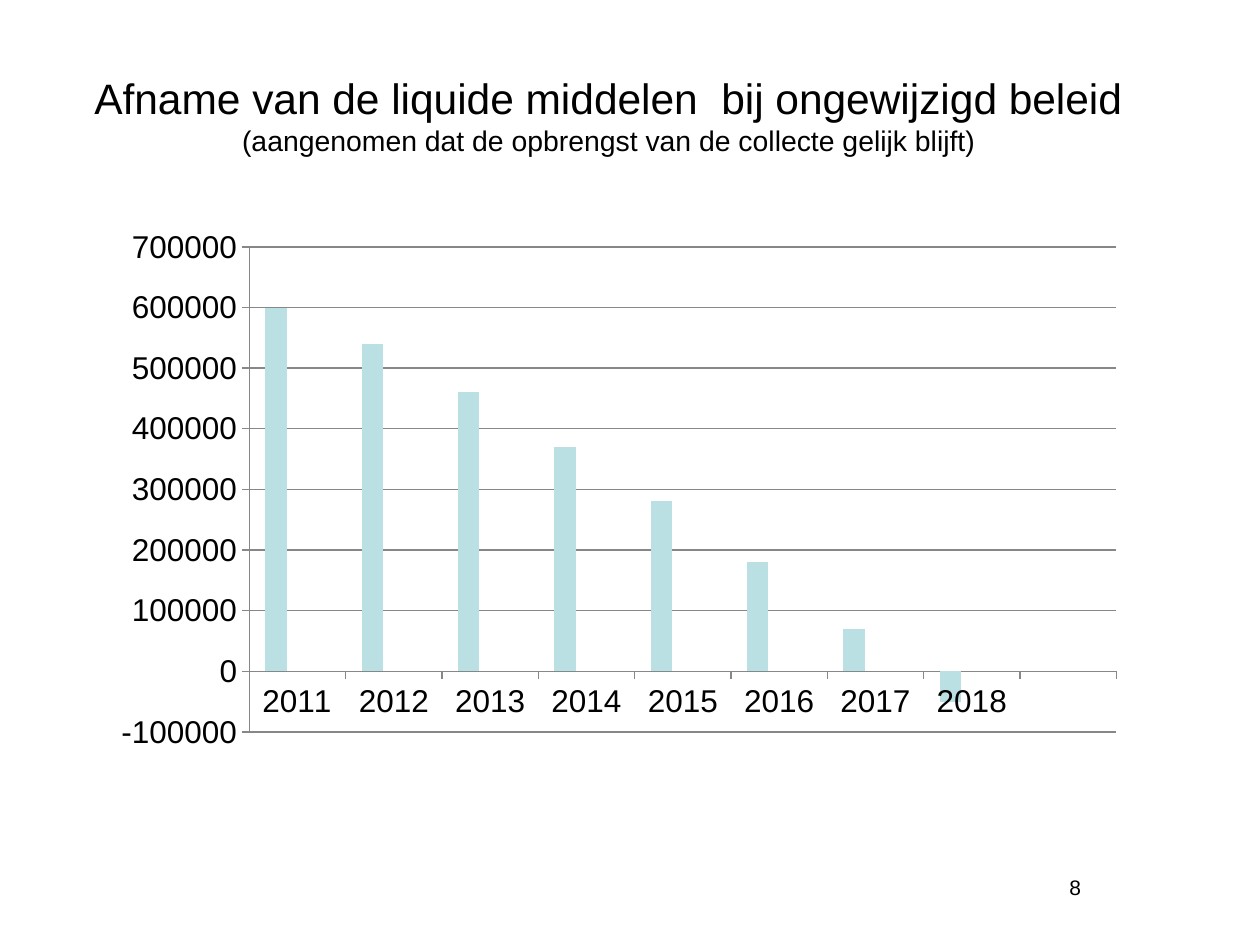
from dataclasses import dataclass

from lxml.etree import SubElement
from pptx import Presentation
from pptx.chart.data import CategoryChartData
from pptx.dml.color import RGBColor as RGB
from pptx.enum.chart import XL_CHART_TYPE as ChartType, XL_TICK_LABEL_POSITION as LabelPos, XL_TICK_MARK as Tick
from pptx.enum.text import MSO_ANCHOR as Anchor, PP_ALIGN as Align
from pptx.oxml.ns import qn
from pptx.util import Emu, Pt


@dataclass(frozen=True)
class Theme:
    """Colours, font and type sizes of the slide."""
    font: str = "Arial"
    text: RGB = RGB(0, 0, 0)
    line: RGB = RGB(0x87, 0x87, 0x87)
    series: tuple = (RGB(0xBB, 0xE0, 0xE3), RGB(0x33, 0x33, 0x99), RGB(0xFF, 0xFF, 0xFF))
    title: float = 24.3
    subtitle: float = 16.2
    axis: float = 18
    number: float = 12


THEME = Theme()
YEARS = [str(year) for year in range(2011, 2019)] + [""]
BALANCES = [600000, 540000, 460000, 370000, 280000, 180000, 70000, -50000, None]


def px(n):
    """Turn pixels into EMU."""
    return Emu(round(n * 914400 / 126))


def style_font(font, size):
    """Apply the theme's typeface and colour at a given size."""
    font.name, font.size = THEME.font, Pt(size)
    font.color.rgb = THEME.text


def add_text(s, lines, box, align=Align.LEFT, top=6):
    """Add one paragraph made of (text, size) lines."""
    tf = s.shapes.add_textbox(*map(px, box)).text_frame
    tf.word_wrap = True
    tf.vertical_anchor = Anchor.TOP
    tf.margin_top = px(top)
    p = tf.paragraphs[0]
    p.alignment = align
    for i, (text, size) in enumerate(lines):
        if i:
            p.add_line_break()
        r = p.add_run()
        r.text = text
        style_font(r.font, size)


def set_plot_area(chart, **fractions):
    """Fix the inner plot area as fractions of the chart."""
    area = chart.plots[0]._element.getparent()
    layout = area.find(qn("c:layout"))
    if layout is None:
        layout = SubElement(area, qn("c:layout"))
        area.insert(0, layout)
    manual = SubElement(layout, qn("c:manualLayout"))
    settings = {"layoutTarget": "inner", "xMode": "edge", "yMode": "edge", **fractions}
    for tag, value in settings.items():
        SubElement(manual, qn(f"c:{tag}")).set("val", str(value))


def style_axis(axis):
    """Give an axis its line and tick marks."""
    axis.format.line.color.rgb = THEME.line
    axis.format.line.width = Pt(0.75)
    axis.major_tick_mark = Tick.OUTSIDE
    axis.minor_tick_mark = Tick.NONE
    axis.tick_label_position = LabelPos.NEXT_TO_AXIS
    style_font(axis.tick_labels.font, THEME.axis)


def add_column_chart(s, box):
    """Add the column chart of the yearly balances."""
    data = CategoryChartData()
    data.categories = YEARS
    blank = [None] * len(YEARS)
    for i, values in enumerate((BALANCES, blank, blank), 1):
        data.add_series(f"Series {i}", values)
    chart = s.shapes.add_chart(ChartType.COLUMN_CLUSTERED, *map(px, box), data).chart
    chart.has_legend = chart.has_title = False
    style_font(chart.font, THEME.axis)
    plot = chart.plots[0]
    plot.vary_by_categories = False
    plot.gap_width, plot.overlap = 150, 0
    for series, color in zip(plot.series, THEME.series):
        series.invert_if_negative = False
        series.format.fill.solid()
        series.format.fill.fore_color.rgb = color
    for axis in (chart.category_axis, chart.value_axis):
        style_axis(axis)
    axis = chart.value_axis
    axis.minimum_scale, axis.maximum_scale, axis.major_unit = -100000, 700000, 100000
    axis.tick_labels.number_format = "0"
    axis.tick_labels.number_format_is_linked = False
    axis.has_major_gridlines = True
    axis.major_gridlines.format.line.color.rgb = THEME.line
    axis.major_gridlines.format.line.width = Pt(0.75)
    set_plot_area(chart, x=0.14, y=0.05, w=0.84, h=0.9)


def main():
    """Build the slide and save it."""
    prs = Presentation()
    prs.slide_width, prs.slide_height = px(1260), px(945)
    s = prs.slides.add_slide(prs.slide_layouts[6])
    add_text(s, [("8", THEME.number)], (1057, 869, 79, 38))
    add_text(s, [("Afname van de liquide middelen  bij ongewijzigd beleid", THEME.title),
                 ("(aangenomen dat de opbrengst van de collecte gelijk blijft)", THEME.subtitle)],
             (73, 63, 1071, 158), align=Align.CENTER, top=9)
    add_column_chart(s, (105, 220, 1032, 539))
    prs.save("out.pptx")


if __name__ == "__main__":
    main()
